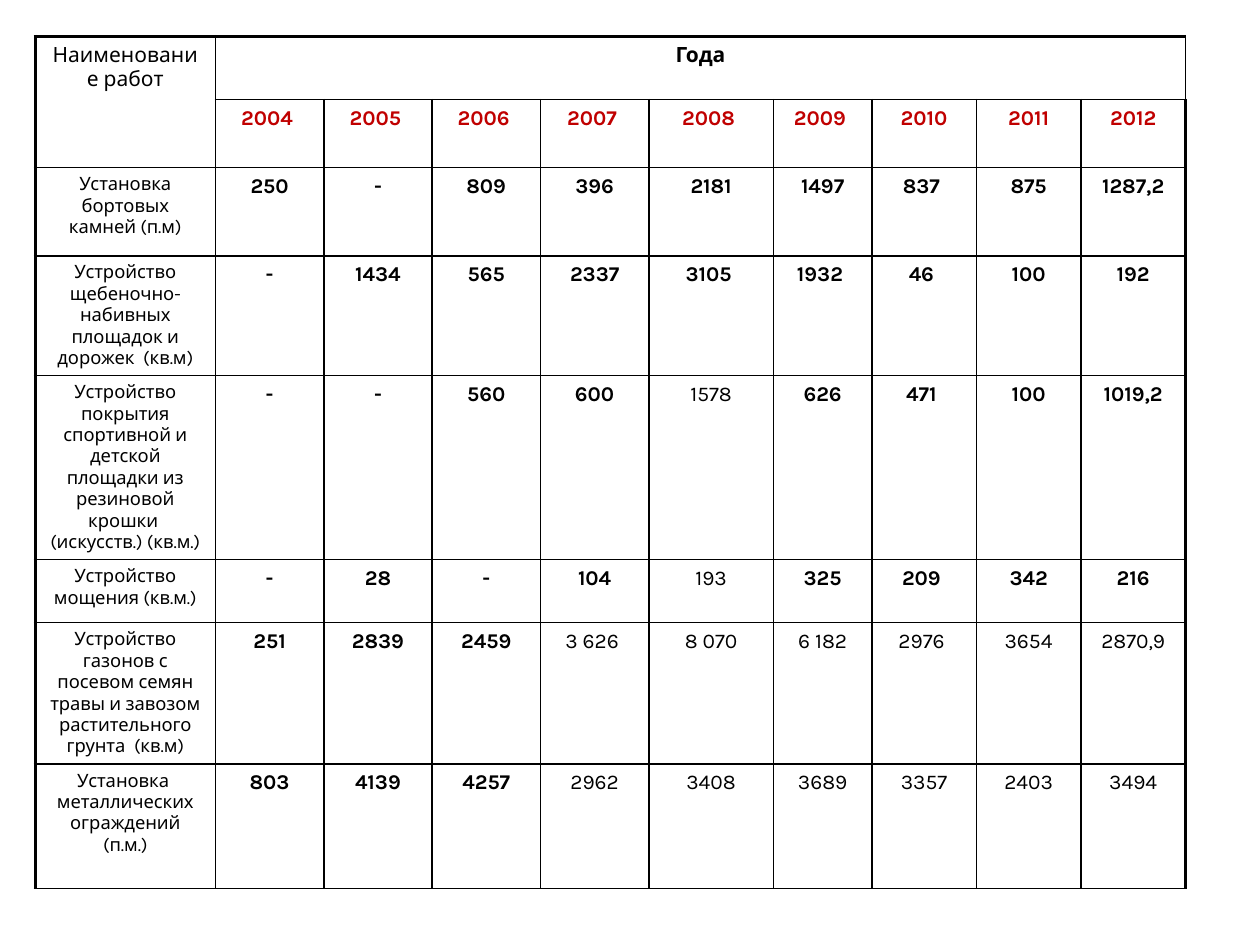
from lxml import etree
from pptx import Presentation
from pptx import util as u
from pptx.dml.color import RGBColor
from pptx.enum import shapes, text
from pptx.oxml import ns

BLACK = RGBColor(0x00, 0x00, 0x00)
RED = RGBColor(0xC0, 0x00, 0x00)
WHITE = RGBColor(0xFF, 0xFF, 0xFF)

GRID_COLS, GRID_ROWS = 1000, 750
COL_WIDTHS = [143, 86, 86, 86, 86, 99, 78, 83, 83, 83]
ROW_HEIGHTS = [50, 54, 70, 39, 82, 50, 51, 99]

YEARS = ["2004 ", "2005 ", "2006 ", "2007 ", "2008 ", "2009 ", "2010", "2011", "2012"]
WORKS = [
    ("Установка бортовых камней (п.м)",
     ["250", "-", "809", "396", "2181", "1497", "837 ", "875", "1287,2"], []),
    ("Устройство щебеночно-набивных площадок и дорожек  (кв.м)",
     ["-", "1434", "565", "2337", "3105 ", "1932 ", "46 ", "100", "192"], []),
    ("Устройство покрытия спортивной и детской площадки из резиновой крошки  (искусств.) (кв.м.)",
     ["-", "-", "560", "600", "1578", "626", "471 ", "100", "1019,2"], [5]),
    ("Устройство мощения (кв.м.)",
     ["-", "28", "-", "104", "193", "325", "209 ", "342", "216"], [5]),
    ("Устройство газонов с посевом семян травы и завозом растительного грунта  (кв.м)",
     ["251", "2839", "2459", "3 626 ", "8 070", " 6 182 ", "2976 ", "3654", "2870,9"], range(4, 10)),
    ("Установка  металлических ограждений (п.м.)",
     ["803", "4139", "4257", "2962", "3408", "3689", "3357", "2403", "3494"], range(4, 10)),
]


def write(tf, content, size=12, bold=False, color=BLACK, before=0.2):
    tf.word_wrap = True
    p = tf.paragraphs[0]
    p.alignment = text.PP_ALIGN.CENTER
    p.space_before = u.Pt(round(size * before, 1))
    r = p.add_run()
    r.text = content
    r.font.name = "Karla"
    r.font.size = u.Pt(size)
    r.font.bold = bold
    r.font.color.rgb = color


def draw_borders(cell, widths):
    tc_pr = cell._tc.get_or_add_tcPr()
    for side, width in widths.items():
        ln = etree.SubElement(tc_pr, ns.qn(f"a:ln{side}"), w=str(u.Pt(width)))
        fill = etree.SubElement(ln, ns.qn("a:solidFill"))
        etree.SubElement(fill, ns.qn("a:srgbClr"), val=str(BLACK))


class Deck:
    def __init__(self):
        self.prs = Presentation()
        self.prs.slide_width = u.Inches(10)
        self.prs.slide_height = u.Inches(7.5)
        self.s = self.prs.slides.add_slide(self.prs.slide_layouts[6])

    def x(self, cols):
        return round(self.prs.slide_width * cols / GRID_COLS)

    def y(self, rows):
        return round(self.prs.slide_height * rows / GRID_ROWS)

    def panel(self, left, top, width, height):
        sp = self.s.shapes.add_shape(shapes.MSO_SHAPE.ROUNDED_RECTANGLE, self.x(left),
                                     self.y(top), self.x(width), self.y(height))
        sp.adjustments[0] = 0.017
        sp.shadow.inherit = False
        sp.fill.solid()
        sp.fill.fore_color.rgb = WHITE
        sp.line.fill.background()

    def table(self, left, top, height, col_widths, row_heights):
        frame = self.s.shapes.add_table(len(row_heights), len(col_widths), self.x(left),
                                        self.y(top), self.x(sum(col_widths)), self.y(height))
        table = frame.table
        table.first_row = table.horz_banding = False
        for column, width in zip(table.columns, col_widths):
            column.width = self.x(width)
        for row, row_height in zip(table.rows, row_heights):
            row.height = self.y(row_height)
        frame.height = self.y(height)
        last = len(col_widths) - 1
        for i, row in enumerate(table.rows):
            for j, cell in enumerate(row.cells):
                draw_borders(cell, {"L": 1 if j else 2.25, "R": 2.25 if j == last else 1,
                                    "T": 1 if i else 2.25, "B": 1})
                cell.fill.background()
        return table


def main():
    deck = Deck()
    deck.panel(10, 11, 980, 729)
    table = deck.table(28, 29, 703, COL_WIDTHS, ROW_HEIGHTS)
    table.cell(0, 0).merge(table.cell(1, 0))
    table.cell(0, 1).merge(table.cell(0, len(YEARS)))
    write(table.cell(0, 0).text_frame, "Наименование работ")
    write(table.cell(0, 1).text_frame, "Года", bold=True)
    for j, year in enumerate(YEARS, 1):
        write(table.cell(1, j).text_frame, year, bold=True, color=RED)
    for i, (work, volumes, plain) in enumerate(WORKS, 2):
        write(table.cell(i, 0).text_frame, work, size=10.5, before=0 if i == 4 else 0.2)
        for j, volume in enumerate(volumes, 1):
            write(table.cell(i, j).text_frame, volume, bold=j not in plain)
    deck.prs.save("out.pptx")


if __name__ == "__main__":
    main()
